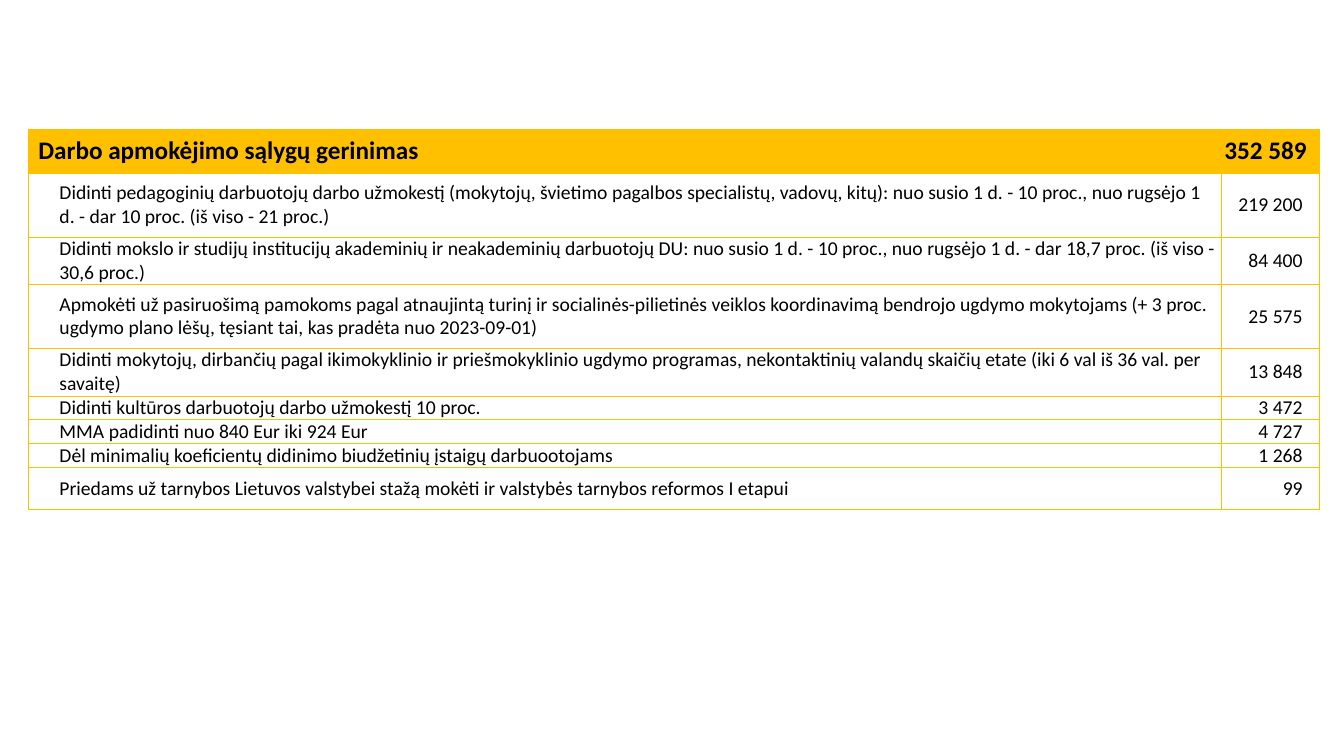
from dataclasses import dataclass

from lxml.etree import SubElement
from pptx import Presentation
from pptx.dml.color import RGBColor
from pptx.enum.text import MSO_ANCHOR, PP_ALIGN
from pptx.oxml.ns import qn
from pptx.util import Inches, Pt

HEADING = ("Darbo apmokėjimo sąlygų gerinimas", "352 589")
MEASURES = [
    ("Didinti pedagoginių darbuotojų darbo užmokestį (mokytojų, švietimo pagalbos specialistų, vadovų, kitų): "
     "nuo susio 1 d. - 10 proc., nuo rugsėjo 1 d. - dar 10 proc. (iš viso - 21 proc.)", "219 200", 3),
    ("Didinti mokslo ir studijų institucijų akademinių ir neakademinių darbuotojų DU: "
     "nuo susio 1 d. - 10 proc., nuo rugsėjo 1 d. - dar 18,7 proc. (iš viso - 30,6 proc.)", "84 400", 2),
    ("Apmokėti už pasiruošimą pamokoms pagal atnaujintą turinį ir socialinės-pilietinės veiklos koordinavimą "
     "bendrojo ugdymo mokytojams (+ 3 proc. ugdymo plano lėšų, tęsiant tai, kas pradėta nuo 2023-09-01)", "25 575", 3),
    ("Didinti mokytojų, dirbančių pagal ikimokyklinio ir priešmokyklinio ugdymo programas, "
     "nekontaktinių valandų skaičių etate (iki 6 val iš 36 val. per savaitę)", "13 848", 2),
    ("Didinti kultūros darbuotojų darbo užmokestį 10 proc.", "3 472", 1),
    ("MMA padidinti nuo 840 Eur iki 924 Eur", "4 727", 1),
    ("Dėl minimalių koeficientų didinimo biudžetinių įstaigų darbuootojams", "1 268", 1),
    ("Priedams už tarnybos Lietuvos valstybei stažą mokėti ir valstybės tarnybos reformos I etapui", "99", 2),
]


@dataclass(frozen=True)
class Theme:
    font: str = "Calibri"
    ink: RGBColor = RGBColor(0, 0, 0)
    accent: RGBColor = RGBColor(0xFF, 0xC0, 0x00)
    heading_size: Pt = Pt(18)
    body_size: Pt = Pt(14)
    border: Pt = Pt(0.5)


THEME = Theme()
SLIDE_WIDTH, SLIDE_HEIGHT = 13.33, 7.5
TABLE_LEFT, TABLE_TOP = 0.28, 1.28
COLUMNS = (11.83, 0.98)
HEADING_HEIGHT, LINE_HEIGHT = 0.44, 0.21
HEADING_INSETS = (0.1, 0.13)
BODY_INSETS = (0.31, 0.17)


def set_all(target, values):
    for name, value in values.items():
        setattr(target, name, value)


def draw_borders(cell):
    properties = cell._tc.get_or_add_tcPr()
    for side in ("lnL", "lnR", "lnT", "lnB"):
        line = SubElement(properties, qn(f"a:{side}"), w=str(THEME.border))
        fill = SubElement(line, qn("a:solidFill"))
        SubElement(fill, qn("a:srgbClr"), val=str(THEME.accent))


def fill_cell(cell, text, is_amount, is_heading):
    left, right = HEADING_INSETS if is_heading else BODY_INSETS
    set_all(cell, {
        "vertical_anchor": MSO_ANCHOR.MIDDLE,
        "margin_left": 0 if is_amount else Inches(left),
        "margin_right": Inches(right) if is_amount else 0,
        "margin_top": 0,
        "margin_bottom": 0,
    })
    draw_borders(cell)
    if is_heading:
        cell.fill.solid()
        cell.fill.fore_color.rgb = THEME.accent
    else:
        cell.fill.background()
    paragraph = cell.text_frame.paragraphs[0]
    paragraph.alignment = PP_ALIGN.RIGHT if is_amount else PP_ALIGN.LEFT
    run = paragraph.add_run()
    run.text = text
    set_all(run.font, {
        "name": THEME.font,
        "size": THEME.heading_size if is_heading else THEME.body_size,
        "bold": is_heading,
    })
    run.font.color.rgb = THEME.ink


def add_budget_table(slide):
    rows = [HEADING] + [(text, amount) for text, amount, _ in MEASURES]
    heights = [HEADING_HEIGHT] + [lines * LINE_HEIGHT for _, _, lines in MEASURES]
    frame = slide.shapes.add_table(
        len(rows), len(COLUMNS), Inches(TABLE_LEFT), Inches(TABLE_TOP),
        Inches(sum(COLUMNS)), Inches(sum(heights)))
    table = frame.table
    set_all(table, {"first_row": False, "horz_banding": False})
    for column, width in zip(table.columns, COLUMNS):
        column.width = Inches(width)
    for index, (row, height, values) in enumerate(zip(table.rows, heights, rows)):
        row.height = Inches(height)
        for position, (cell, text) in enumerate(zip(row.cells, values)):
            fill_cell(cell, text, position == 1, index == 0)


def main():
    presentation = Presentation()
    set_all(presentation, {"slide_width": Inches(SLIDE_WIDTH), "slide_height": Inches(SLIDE_HEIGHT)})
    slide = presentation.slides.add_slide(presentation.slide_layouts[6])
    add_budget_table(slide)
    presentation.save("out.pptx")


if __name__ == "__main__":
    main()
